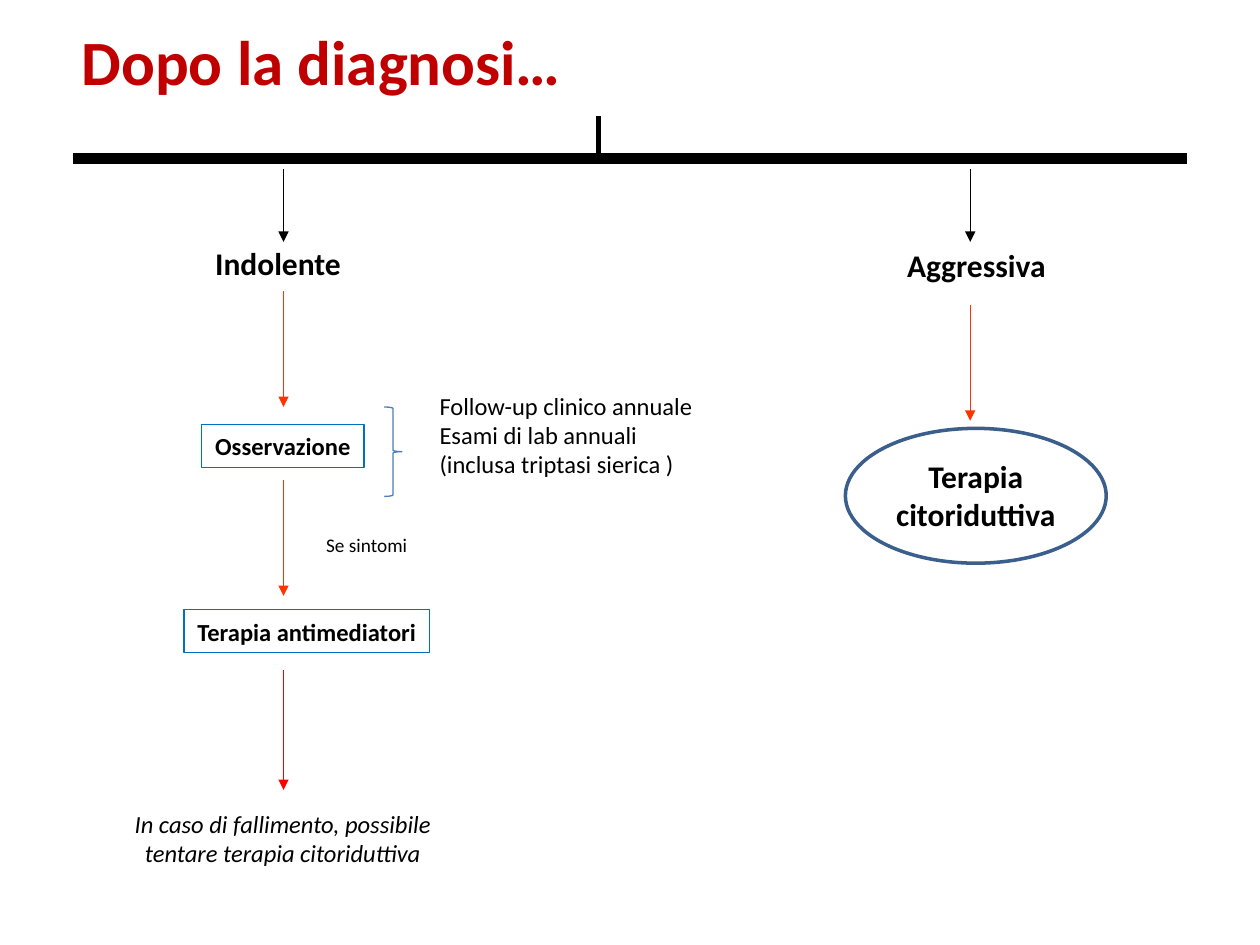
from pptx import Presentation
from pptx import util as u
from pptx.dml.color import RGBColor
from pptx.enum import shapes, text
from pptx.oxml import parse_xml
from pptx.oxml.ns import nsdecls

COLORS = {
    "title": "C00000", "ink": "000000", "step": "FF3300", "failure": "FF0000",
    "frame": "0070C0", "ellipse": "3A5F8C", "brace": "4B7EBC",
}
CENTER = text.PP_ALIGN.CENTER


def color(name):
    return RGBColor.from_string(COLORS[name])


def write(holder, words, size, ink="ink", bold=False, italic=False, align=None, wrap=True):
    frame = holder.text_frame
    frame.word_wrap = wrap
    para = frame.paragraphs[0]
    para.text = words
    para.alignment = align or text.PP_ALIGN.LEFT
    font = para.font
    font.name, font.size = "Calibri", u.Pt(size)
    font.bold, font.italic = bold, italic
    font.color.rgb = color(ink)


def add_text(page, left, top, width, height, words, size, **style):
    box = page.shapes.add_textbox(*map(u.Inches, (left, top, width, height)))
    write(box, words, size, **style)


def add_outline(page, kind, left, top, width, height, line, weight=0.75):
    shape = page.shapes.add_shape(kind, *map(u.Inches, (left, top, width, height)))
    shape.shadow.inherit = False
    shape.fill.background()
    shape.line.color.rgb = color(line)
    shape.line.width = u.Pt(weight)
    return shape


def add_step(page, left, top, width, words):
    step = add_outline(page, shapes.MSO_SHAPE.RECTANGLE, left, top, width, 0.34, "frame")
    write(step, words, 14, bold=True, align=CENTER, wrap=False)


def add_line(page, x1, y1, x2, y2, ink="ink", weight=0.75):
    line = page.shapes.add_connector(
        shapes.MSO_CONNECTOR.STRAIGHT, *map(u.Inches, (x1, y1, x2, y2)))
    line.line.color.rgb = color(ink)
    line.line.width = u.Pt(weight)
    line._element.spPr.append(parse_xml(f"<a:effectLst {nsdecls('a')}/>"))
    return line


def add_arrow(page, x, top, length, ink="step"):
    arrow = add_line(page, x, top, x, top + length, ink)
    arrow.line._get_or_add_ln().append(
        parse_xml(f'<a:tailEnd {nsdecls("a")} type="triangle"/>'))


def draw_header(page, left, top):
    add_text(page, left, top, 5, 0.71, "Dopo la diagnosi…", 36, ink="title", bold=True)
    # Fork that opens the two branches
    bar = top + 1.13
    add_line(page, left + 0.03, bar, left + 8.87, bar, weight=6)
    add_line(page, left + 4.2, bar - 0.34, left + 4.2, bar, weight=3)


def draw_indolent(page, axis, top):
    add_arrow(page, axis, top, 0.58, "ink")
    add_text(page, axis - 0.64, top + 0.55, 1.2, 0.4, "Indolente", 18, bold=True, wrap=False)
    # Observation and its follow-up
    add_arrow(page, axis, top + 0.97, 0.92)
    add_step(page, axis - 0.65, top + 2.03, 1.29, "Osservazione")
    add_outline(page, shapes.MSO_SHAPE.RIGHT_BRACE, axis + 0.8, top + 1.89, 0.14, 0.71, "brace")
    add_text(page, axis + 1.14, top + 1.71, 2.34, 0.81,
             "Follow-up clinico annuale Esami di lab annuali (inclusa triptasi sierica )", 14)
    # Treatment of symptoms
    add_arrow(page, axis, top + 2.47, 0.92)
    add_text(page, axis + 0.24, top + 2.84, 0.9, 0.29, "Se sintomi", 11)
    add_step(page, axis - 0.79, top + 3.5, 1.95, "Terapia antimediatori")
    # Failure of treatment
    add_arrow(page, axis, top + 3.98, 0.95, "failure")
    add_text(page, axis - 1.29, top + 5.03, 2.57, 0.57,
             "In caso di fallimento, possibile tentare terapia citoriduttiva",
             14, italic=True, align=CENTER)


def draw_aggressive(page, axis, top):
    add_arrow(page, axis, top, 0.58, "ink")
    add_text(page, axis - 0.6, top + 0.56, 1.31, 0.4, "Aggressiva", 18, bold=True, wrap=False)
    # Cytoreductive therapy
    add_arrow(page, axis, top + 1.08, 0.92)
    add_outline(page, shapes.MSO_SHAPE.OVAL, axis - 0.99, top + 2.06, 2.07, 1.07, "ellipse", 2)
    add_text(page, axis - 0.99, top + 2.24, 2.07, 0.71, "Terapia citoriduttiva",
             18, bold=True, align=CENTER)


def main():
    deck = Presentation()
    deck.slide_width, deck.slide_height = u.Inches(10), u.Inches(7.5)
    page = deck.slides.add_slide(deck.slide_layouts[6])
    draw_header(page, 0.55, 0.13)
    draw_indolent(page, 2.25, 1.34)
    draw_aggressive(page, 7.7, 1.34)
    deck.save("out.pptx")


if __name__ == "__main__":
    main()
